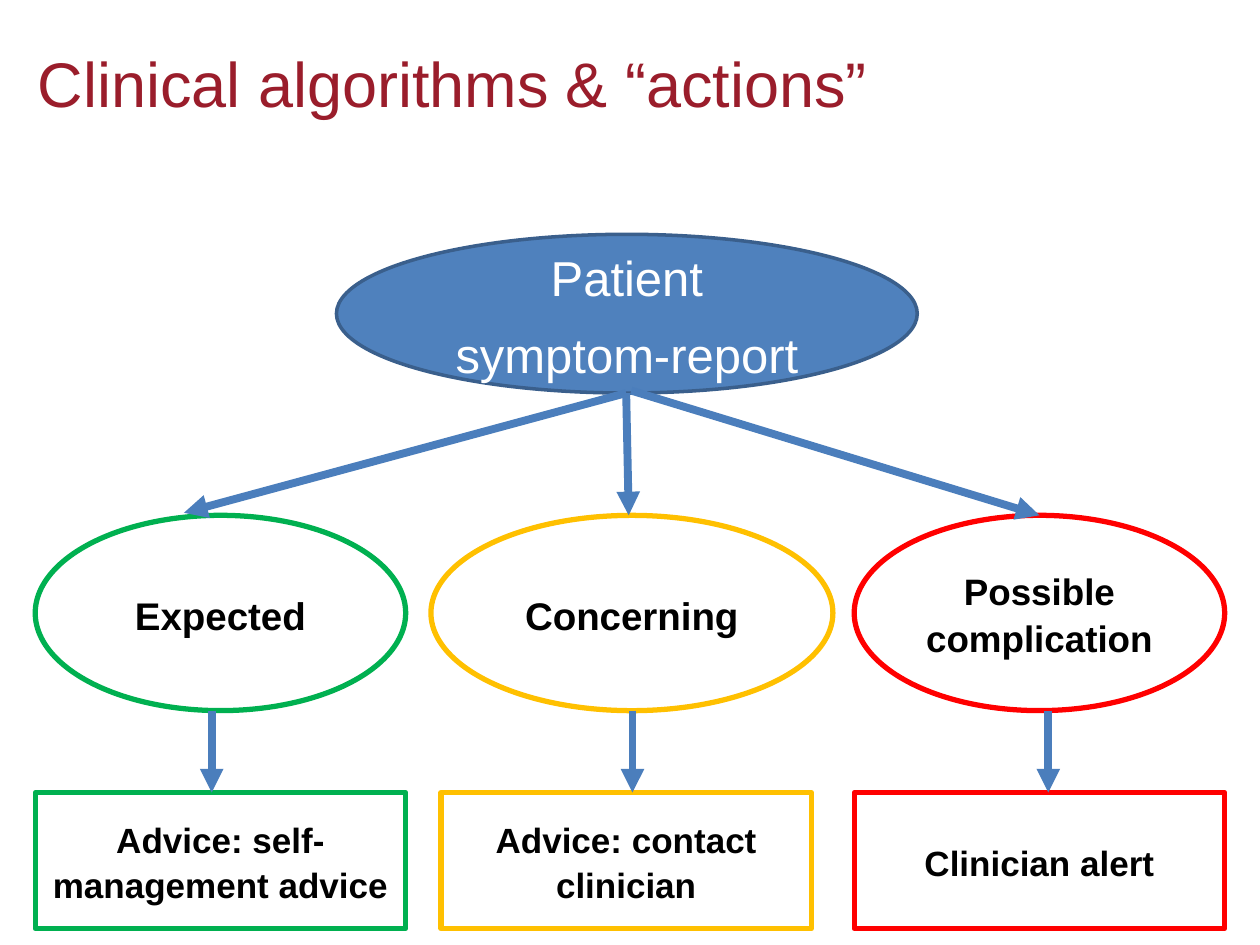
import pptx
import pptx.util
import pptx.dml.color
import pptx.enum.shapes
import pptx.enum.text
import pptx.oxml.ns
import lxml.etree

Inches = pptx.util.Inches
SHAPES = pptx.enum.shapes.MSO_SHAPE
ALIGN = pptx.enum.text.PP_ALIGN
ANCHOR = pptx.enum.text.MSO_ANCHOR
NODE_PARAGRAPH = {"alignment": ALIGN.CENTER, "line_spacing": 1.07, "space_after": pptx.util.Pt(8)}
TITLE_PARAGRAPH = {"alignment": ALIGN.JUSTIFY}


def color(hex_value):
    return pptx.dml.color.RGBColor.from_string(hex_value)


def apply_format(target, values):
    for name, value in values.items():
        setattr(target, name, value)


def write_text(frame, lines, size, text_color, bold, anchor, paragraph_format):
    apply_format(frame, {"word_wrap": True, "vertical_anchor": anchor})
    for index, line in enumerate(lines):
        paragraph = frame.add_paragraph() if index else frame.paragraphs[0]
        paragraph.text = line
        apply_format(paragraph, paragraph_format)
        apply_format(paragraph.font, {"name": "Arial", "size": pptx.util.Pt(size), "bold": bold})
        paragraph.font.color.rgb = color(text_color)


def add_node(slide, kind, box, lines, size, outline, outline_width=3, fill=None,
             text_color="000000", bold=True):
    node = slide.shapes.add_shape(kind, *map(Inches, box))
    node.shadow.inherit = False
    if fill:
        node.fill.solid()
        node.fill.fore_color.rgb = color(fill)
    else:
        node.fill.background()
    node.line.color.rgb = color(outline)
    node.line.width = pptx.util.Pt(outline_width)
    write_text(node.text_frame, lines, size, text_color, bold, ANCHOR.MIDDLE, NODE_PARAGRAPH)


def add_arrow(slide, start, end):
    arrow = slide.shapes.add_connector(
        pptx.enum.shapes.MSO_CONNECTOR.STRAIGHT, *map(Inches, (*start, *end)))
    arrow.line.color.rgb = color("4B7EBC")
    arrow.line.width = pptx.util.Pt(4.5)
    qn = pptx.oxml.ns.qn
    lxml.etree.SubElement(arrow.line._get_or_add_ln(), qn("a:tailEnd"), type="triangle")
    lxml.etree.SubElement(arrow._element.spPr, qn("a:effectLst"))


def add_title(slide, box, title):
    heading = slide.shapes.add_textbox(*map(Inches, box))
    write_text(heading.text_frame, [title], 36, "9A1D2B", False, ANCHOR.TOP, TITLE_PARAGRAPH)


def add_report(slide, box):
    add_node(slide, SHAPES.OVAL, box, ["Patient", "symptom-report"], 28, "3A5F8C",
             outline_width=2, fill="4F81BD", text_color="FFFFFF", bold=False)


def add_branch(slide, box, finding, finding_size, action, outline, finding_left, finding_width, arrow_x):
    left, top, width, height = box
    finding_height, action_height = 1.55, 1.08
    action_top = top + height - action_height
    add_node(slide, SHAPES.OVAL, (left + finding_left, top, finding_width, finding_height),
             [finding], finding_size, outline)
    add_node(slide, SHAPES.RECTANGLE, (left, action_top, width, action_height),
             [action], 20, outline)
    add_arrow(slide, (left + arrow_x, top + finding_height), (left + arrow_x, action_top))


def add_report_arrows(slide, box):
    left, top, width, height = box
    routes = [((3.51, 0.02), (0, 0.97)), ((3.55, 0), (width, height)), ((3.51, 0.02), (3.53, height))]
    for start, end in routes:
        add_arrow(slide, (left + start[0], top + start[1]), (left + end[0], top + end[1]))


def main():
    deck = pptx.Presentation()
    deck.slide_width, deck.slide_height = Inches(10), Inches(7.5)
    slide = deck.slides.add_slide(deck.slide_layouts[6])

    add_report(slide, (2.67, 1.86, 4.61, 1.26))
    branches = [
        (0.28, "Expected", 22, "Advice: self-management advice", "00B050", 0, 2.94, 1.4),
        (3.5, "Concerning", 22, "Advice: contact clinician", "FFC000", -0.08, 3.19, 1.52),
        (6.78, "Possible complication", 21, "Clinician alert", "FF0000", 0, 2.94, 1.54),
    ]
    for left, *details in branches:
        add_branch(slide, (left, 4.09, 2.94, 3.28), *details)
    add_report_arrows(slide, (1.46, 3.1, 6.79, 0.99))
    add_title(slide, (0.2, 0.3, 9.69, 1.25), "Clinical algorithms & “actions”")

    deck.save("out.pptx")


if __name__ == "__main__":
    main()
